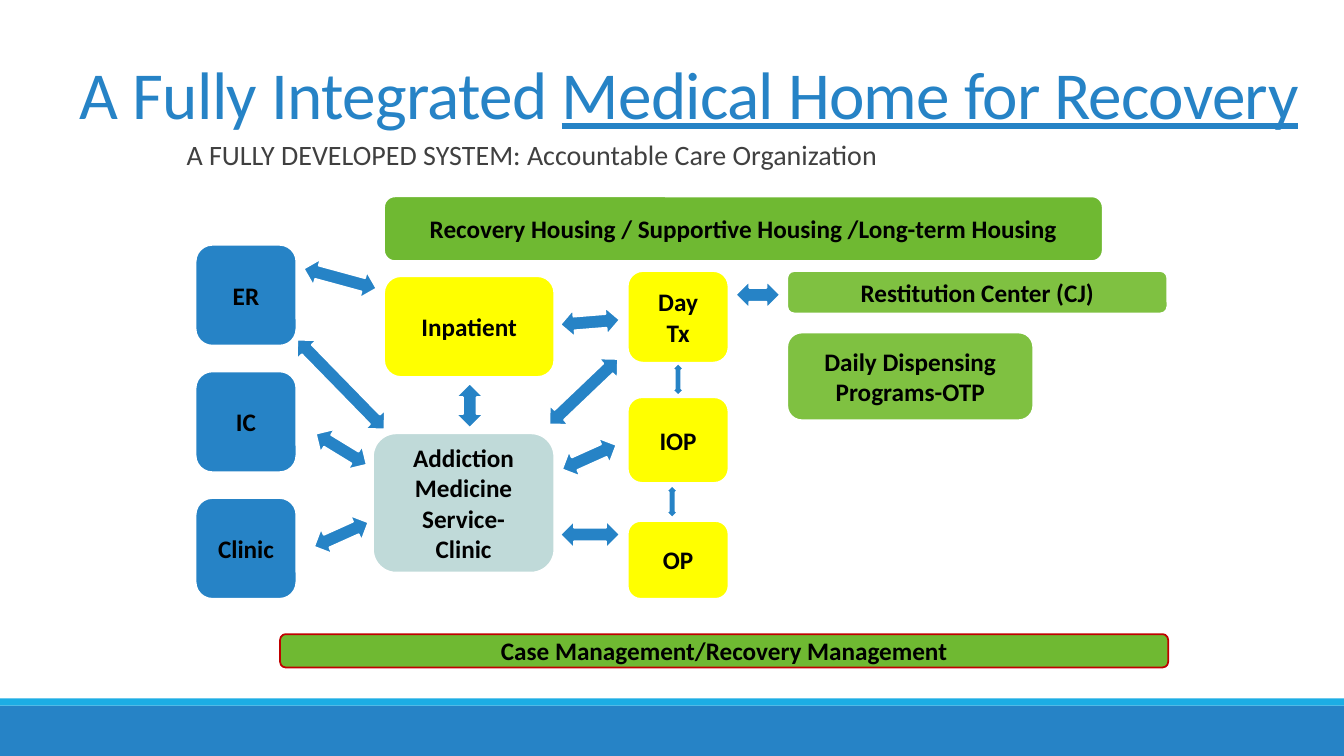
from dataclasses import dataclass

from lxml.etree import SubElement
from pptx import Presentation
from pptx.dml.color import RGBColor
from pptx.enum.shapes import MSO_SHAPE
from pptx.enum.text import MSO_ANCHOR, MSO_AUTO_SIZE, PP_ALIGN
from pptx.oxml.ns import qn
from pptx.util import Cm, Pt


@dataclass(frozen=True)
class Theme:
    font: str = "Calibri"
    title_size: float = 48
    body_size: float = 20
    label_size: float = 18
    outline_width: float = 1.25
    blue: str = "2683C6"
    cyan: str = "1CADE4"
    yellow: str = "FFFF00"
    pale_teal: str = "C0DAD9"
    green: str = "6FB932"
    light_green: str = "7FC141"
    red: str = "C00000"
    white: str = "FFFFFF"
    black: str = "000000"
    grey: str = "404040"


class SlideBuilder:
    def __init__(self, page, theme):
        self.page = page
        self.theme = theme

    def span(self, para, text, size, color, bold=False, underline=None):
        span = para.add_run()
        span.text = text
        span.font.name = self.theme.font
        span.font.size = Pt(size)
        span.font.bold = bold
        span.font.underline = underline
        span.font.color.rgb = RGBColor.from_string(color)
        return span

    def place(self, holder, left, top, width, height, anchor):
        """Move a placeholder and return its first paragraph."""
        holder.left, holder.top = Cm(left), Cm(top)
        holder.width, holder.height = Cm(width), Cm(height)
        frame = holder.text_frame
        frame.word_wrap = True
        frame.auto_size = MSO_AUTO_SIZE.NONE
        frame.vertical_anchor = anchor
        return frame.paragraphs[0]

    def title(self, plain, underlined):
        para = self.place(self.page.shapes.title, 0.86, 1.04, 33.02, 2.44, MSO_ANCHOR.BOTTOM)
        para.alignment = PP_ALIGN.CENTER
        para.line_spacing = 0.85
        for text, underline in ((plain, None), (underlined, True)):
            span = self.span(para, text, self.theme.title_size, self.theme.blue, underline=underline)
            span._r.get_or_add_rPr().set("spc", "-50")

    def subtitle(self, text):
        holder = self.page.placeholders[1]
        para = self.place(holder, 4.7, 3.43, 24.43, 10.74, MSO_ANCHOR.TOP)
        holder.text_frame.margin_left = holder.text_frame.margin_right = 0
        properties = para._p.get_or_add_pPr()
        properties.set("marL", "0")
        properties.set("indent", "0")
        SubElement(properties, qn("a:buNone"))
        para.alignment = PP_ALIGN.LEFT
        para.line_spacing = 0.9
        para.space_before = Pt(0)
        para.space_after = Pt(2)
        self.span(para, text, self.theme.body_size, self.theme.grey)

    def shape(self, kind, left, top, width, height, fill, outline=None):
        shape = self.page.shapes.add_shape(kind, Cm(left), Cm(top), Cm(width), Cm(height))
        shape.shadow.inherit = False
        shape.fill.solid()
        shape.fill.fore_color.rgb = RGBColor.from_string(fill)
        if outline:
            shape.line.color.rgb = RGBColor.from_string(outline)
            shape.line.width = Pt(self.theme.outline_width)
        else:
            shape.line.fill.background()
        return shape

    def box(self, lines, left, top, width, height, fill, outline=None):
        box = self.shape(MSO_SHAPE.ROUNDED_RECTANGLE, left, top, width, height,
                         fill, outline or self.theme.white)
        frame = box.text_frame
        frame.word_wrap = True
        frame.vertical_anchor = MSO_ANCHOR.MIDDLE
        for index, text in enumerate(lines):
            para = frame.add_paragraph() if index else frame.paragraphs[0]
            para.alignment = PP_ALIGN.CENTER
            self.span(para, text, self.theme.label_size, self.theme.black, bold=True)

    def arrow(self, center_x, center_y, length, angle=0, thickness=0.69):
        arrow = self.shape(MSO_SHAPE.LEFT_RIGHT_ARROW, center_x - length / 2,
                           center_y - thickness / 2, length, thickness,
                           self.theme.blue, self.theme.white)
        arrow.rotation = angle


def main():
    deck = Presentation()
    deck.slide_width, deck.slide_height = Cm(33.87), Cm(19.05)
    theme = Theme()
    slide = SlideBuilder(deck.slides.add_slide(deck.slide_layouts[1]), theme)

    slide.shape(MSO_SHAPE.RECTANGLE, 0, 17.78, 33.87, 1.27, theme.blue)
    slide.shape(MSO_SHAPE.RECTANGLE, 0, 17.6, 33.87, 0.18, theme.cyan)
    slide.title("A Fully Integrated ", "Medical Home for Recovery")
    slide.subtitle("A FULLY DEVELOPED SYSTEM: Accountable Care Organization")

    side = 2.54
    for row, name in enumerate(("ER", "IC", "Clinic")):
        slide.box([name], 4.93, 6.17 + row * 3.19, side, side, theme.blue)

    for lines, top, height in (
        (["Day", "Tx"], 6.83, 2.31),
        (["IOP"], 10.01, 2.16),
        (["OP"], 13.13, 1.96),
    ):
        slide.box(lines, 15.82, top, side, height, theme.yellow)

    slide.box(["Inpatient"], 9.68, 6.96, 4.29, side, theme.yellow)
    slide.box(["Addiction Medicine", "Service-", "Clinic"], 9.4, 10.92, 4.57, 3.51, theme.pale_teal)
    slide.box(["Restitution Center (CJ)"], 19.84, 6.83, 9.58, 1.07, theme.light_green)
    slide.box(["Daily Dispensing Programs-OTP"], 19.84, 8.38, 6.2, 2.21, theme.light_green)
    slide.box(["Recovery Housing / Supportive Housing /Long-term Housing"],
              9.68, 4.95, 18.11, 1.63, theme.green)
    slide.box(["Case Management/Recovery Management"],
              7.06, 15.98, 22.38, 0.84, theme.green, theme.red)

    for center_x, center_y, length, angle in (
        (8.57, 7.02, 1.9, 15.2),      # ER - Inpatient
        (8.59, 9.69, 3.15, 45.7),     # ER - Addiction Medicine
        (8.6, 11.32, 1.5, 31.4),      # IC - Addiction Medicine
        (8.6, 13.47, 1.5, -24.2),     # Clinic - Addiction Medicine
        (11.84, 10.22, 1.12, -90),    # Inpatient - Addiction Medicine
        (14.87, 8.12, 1.5, -4.6),     # Inpatient - Day Tx
        (14.71, 9.87, 2.39, -43.6),   # Addiction Medicine - Day Tx
        (14.85, 11.52, 1.5, -24.2),   # Addiction Medicine - IOP
        (14.87, 13.47, 1.5, 0),       # Addiction Medicine - OP
        (19.1, 7.43, 1.12, 0),        # Day Tx - Restitution Center
    ):
        slide.arrow(center_x, center_y, length, angle)

    for center_x, center_y in ((17.09, 9.56), (16.94, 12.64)):
        slide.arrow(center_x, center_y, 0.81, -90, thickness=0.33)

    deck.save("out.pptx")


if __name__ == "__main__":
    main()
